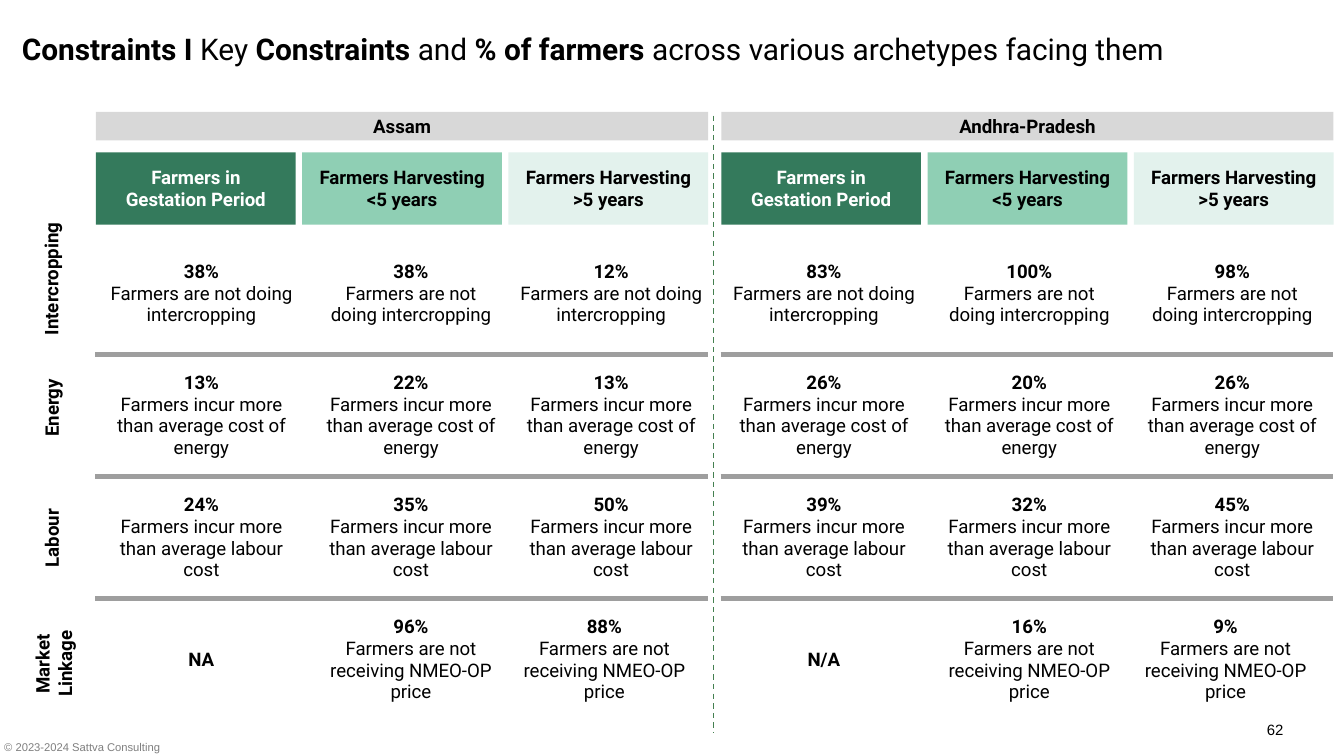
from dataclasses import dataclass

from lxml.etree import SubElement
from pptx import Presentation
from pptx.dml.color import RGBColor
from pptx.enum.dml import MSO_LINE
from pptx.enum.shapes import MSO_CONNECTOR, MSO_SHAPE
from pptx.enum.text import MSO_ANCHOR, PP_ALIGN
from pptx.oxml.ns import qn
from pptx.util import Pt


@dataclass(frozen=True)
class Theme:
    font: str = "Roboto"
    footer_font: str = "Arial"
    black: str = "000000"
    white: str = "FFFFFF"
    dark_green: str = "347A5C"
    mid_green: str = "8FCFB4"
    pale_green: str = "E3F2ED"
    divider: str = "448050"
    band: str = "D8D8D8"
    rule: str = "9E9E9E"
    footer: str = "7F7F7F"
    title_size: float = 16
    body_size: float = 10
    number_size: float = 8
    footer_size: float = 6


theme = Theme()


def write(frame, lines, font=theme.font, size=theme.body_size, color=theme.black,
          align=PP_ALIGN.CENTER, spacing=None):
    """Fill a text frame with lines, each a list of (text, bold) runs."""
    for index, line in enumerate(lines):
        paragraph = frame.add_paragraph() if index else frame.paragraphs[0]
        paragraph.alignment = align
        paragraph.line_spacing = spacing
        for text, bold in line:
            run = paragraph.add_run()
            run.text = text
            run.font.name = font
            run.font.size = Pt(size)
            run.font.bold = bold
            run.font.color.rgb = RGBColor.from_string(color)


def set_border(cell, side, color, width):
    border = SubElement(cell._tc.get_or_add_tcPr(), qn(f"a:ln{side}"), w=str(Pt(width)))
    fill = SubElement(border, qn("a:solidFill"))
    SubElement(fill, qn("a:srgbClr"), val=color)


presentation = Presentation()
presentation.slide_width, presentation.slide_height = Pt(720), Pt(405)
slide = presentation.slides.add_slide(presentation.slide_layouts[5])

# Title
title = slide.shapes.title
title.left, title.top, title.width, title.height = Pt(6.5), Pt(9.4), Pt(700), Pt(35.3)
heading = title.text_frame
heading.word_wrap = True
heading.vertical_anchor = MSO_ANCHOR.MIDDLE
heading.margin_left = heading.margin_right = Pt(5.2)
heading.margin_top = heading.margin_bottom = Pt(2.6)
write(heading, [[("Constraints I ", True), ("Key", False), (" Constraints", True),
                 (" and ", False), ("% of farmers ", True),
                 ("across various archetypes facing them", False)]],
      size=theme.title_size, align=PP_ALIGN.LEFT, spacing=0.9)

# Content: four constraints, three archetypes in each of two states
constraints = {
    "Intercropping": "Farmers are not doing intercropping",
    "Energy": "Farmers incur more than average cost of energy",
    "Labour": "Farmers incur more than average labour cost",
    "Market Linkage": "Farmers are not receiving NMEO-OP price",
}
archetypes = [
    (["Farmers in Gestation Period"], theme.dark_green, theme.white),
    (["Farmers Harvesting", "<5 years"], theme.mid_green, theme.black),
    (["Farmers Harvesting", ">5 years"], theme.pale_green, theme.black),
]
# Each state: left edge, column widths, shares, narrowed (left, right) cell margins
states = {
    "Assam": (51.4, [113, 111.5, 103],
              [["38%", "38%", "12%"], ["13%", "22%", "13%"],
               ["24%", "35%", "50%"], ["NA", "96%", "88%"]],
              {(0, 2): (0, 0), (1, 2): (0, 0), (3, 2): (0, 7.2)}),
    "Andhra-Pradesh": (386.4, [110, 110, 107.5],
                       [["83%", "100%", "98%"], ["26%", "20%", "26%"],
                        ["39%", "32%", "45%"], ["N/A", "16%", "9%"]],
                       {(0, 0): (0, 0), (1, 2): (0, 0), (3, 2): (0, 7.2)}),
}
header_width, header_gap = 107, 3.5
band_width = 3 * header_width + 2 * header_gap
table_top, row_height = 124.6, 65.4

for state, (left, widths, shares, margins) in states.items():
    # State band and archetype headers
    blocks = [(left, 59.9, band_width, 15.3, [state], theme.band, theme.black,
               MSO_ANCHOR.MIDDLE)]
    for column, (lines, fill, color) in enumerate(archetypes):
        blocks.append((left + column * (header_width + header_gap), 81.6, header_width,
                       38.8, lines, fill, color, MSO_ANCHOR.TOP))
    for x, y, width, height, lines, fill, color, anchor in blocks:
        block = slide.shapes.add_shape(MSO_SHAPE.RECTANGLE, Pt(x), Pt(y), Pt(width), Pt(height))
        block.shadow.inherit = False
        block.fill.solid()
        block.fill.fore_color.rgb = RGBColor.from_string(fill)
        block.line.fill.background()
        label = block.text_frame
        label.word_wrap = True
        label.vertical_anchor = anchor
        label.margin_left = label.margin_right = Pt(7.2)
        label.margin_top = label.margin_bottom = Pt(7.2)
        write(label, [[(line, True)] for line in lines], color=color)

    # Table of shares
    table = slide.shapes.add_table(4, 3, Pt(left), Pt(table_top), Pt(sum(widths)),
                                   Pt(4 * row_height)).table
    table.first_row = table.horz_banding = False
    for column, width in enumerate(widths):
        table.columns[column].width = Pt(width)
    for row, finding in enumerate(constraints.values()):
        table.rows[row].height = Pt(row_height)
        for column, share in enumerate(shares[row]):
            cell = table.cell(row, column)
            for side, ruled in (("L", False), ("R", False), ("T", row > 0), ("B", row < 3)):
                set_border(cell, side, theme.rule if ruled else theme.white,
                           3 if ruled else 0.75)
            cell.fill.background()
            cell.vertical_anchor = MSO_ANCHOR.MIDDLE
            margin_left, margin_right = margins.get((row, column), (7.2, 7.2))
            cell.margin_left, cell.margin_right = Pt(margin_left), Pt(margin_right)
            cell.margin_top = cell.margin_bottom = Pt(7.2)
            lines = [[(share, True)]]
            if share.endswith("%"):
                lines.append([(finding, False)])
            write(cell.text_frame, lines)

# Dashed divider between the states
divider = slide.shapes.add_connector(MSO_CONNECTOR.STRAIGHT, Pt(382.3), Pt(62), Pt(382.3), Pt(392.4))
divider.line.color.rgb = RGBColor.from_string(theme.divider)
divider.line.width = Pt(0.75)
divider.line.dash_style = MSO_LINE.DASH
SubElement(divider._element.spPr, qn("a:effectLst"))

# Rotated constraint labels, then copyright line and page number
label_boxes = [(-10, 136.1, 77, 26.6), (-2.2, 205.2, 62, 26.6),
               (-14.4, 275, 86.4, 26.6), (-2.2, 336.2, 62, 38.9)]
notes = [(name, box, 270, (7.2, 7.2), {}) for name, box in zip(constraints, label_boxes)]
notes += [
    ("© 2023-2024 Sattva Consulting", (-2.9, 393.8, 105, 13), 0, (5.2, 2.6),
     dict(font=theme.footer_font, size=theme.footer_size, color=theme.footer,
          align=PP_ALIGN.LEFT)),
    ("62", (648.7, 383.8, 43.2, 31), 0, (4.3, 2.2),
     dict(font=theme.footer_font, size=theme.number_size, align=PP_ALIGN.RIGHT)),
]
for text, box, rotation, (side_margin, end_margin), style in notes:
    note = slide.shapes.add_textbox(*map(Pt, box))
    note.rotation = rotation
    frame = note.text_frame
    frame.word_wrap = True
    frame.margin_left = frame.margin_right = Pt(side_margin)
    frame.margin_top = frame.margin_bottom = Pt(end_margin)
    write(frame, [[(text, not style)]], **style)

presentation.save("out.pptx")
